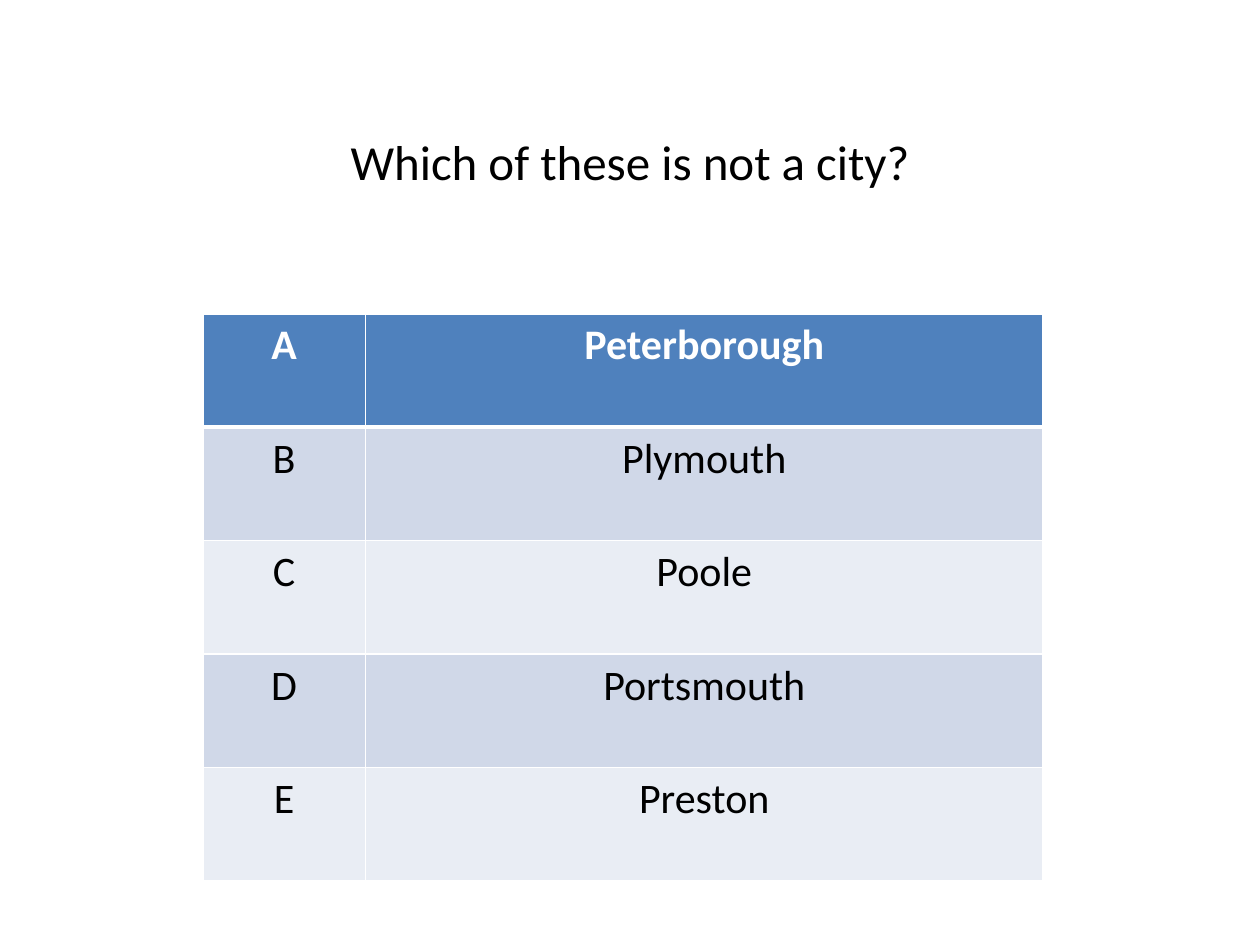
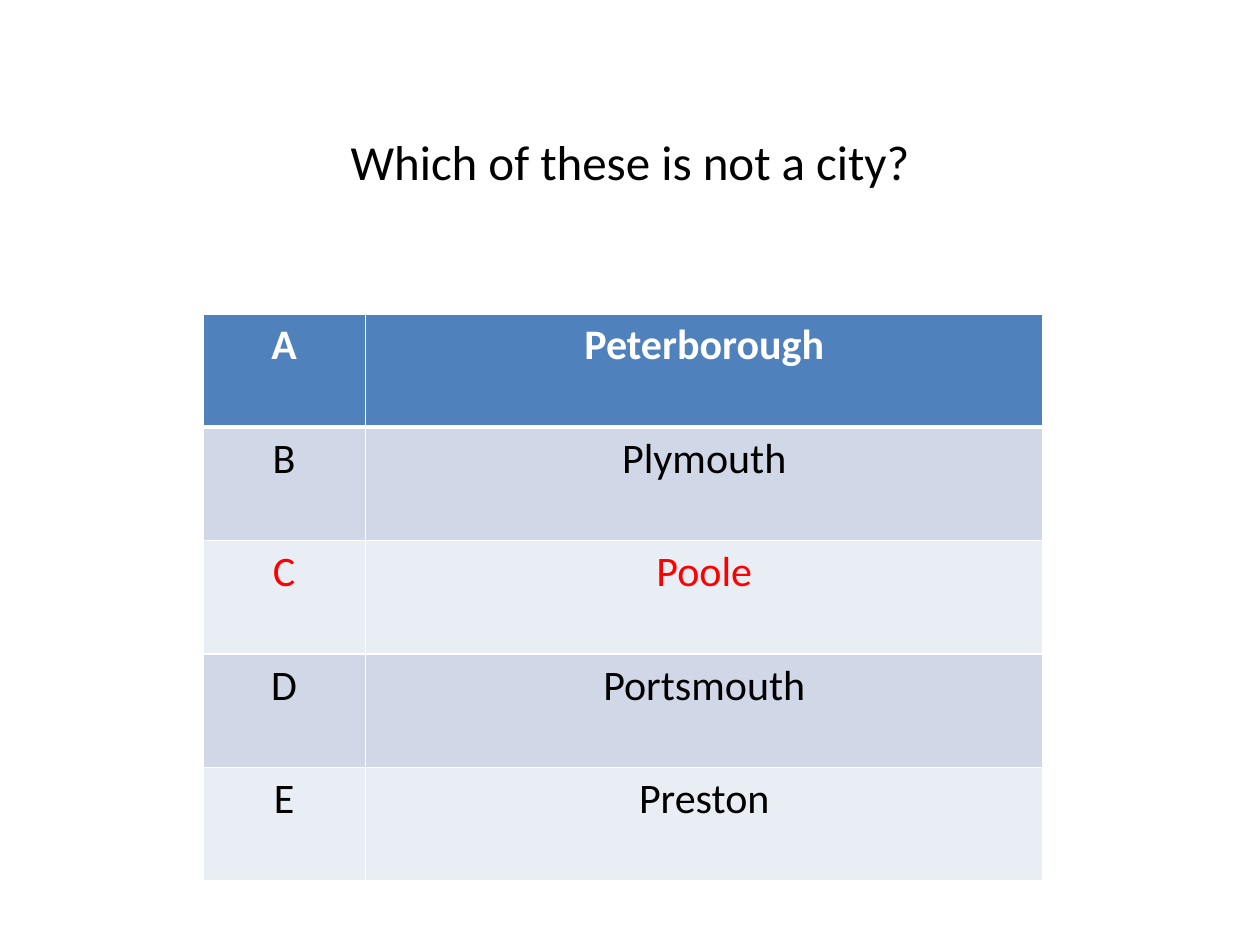
from lxml import etree
from pptx import Presentation
from pptx.dml.color import RGBColor
from pptx.enum.text import MSO_ANCHOR, PP_ALIGN
from pptx.oxml.ns import qn
from pptx.util import Inches, Pt

CENTER = PP_ALIGN.CENTER
MIDDLE = MSO_ANCHOR.MIDDLE
TITLE_ONLY = 5

COLORS = {
    "header": "4F81BD",
    "band_dark": "D0D8E8",
    "band_light": "E9EDF4",
    "white": "FFFFFF",
    "text": "000000",
    "answer": "FF0000",
}
FONT = "Calibri"
COLS, ROWS = 100, 75  # grid units across and down the slide

QUESTION = "Which of these is not a city?"
CITIES = ["Peterborough", "Plymouth", "Poole", "Portsmouth", "Preston"]
OPTIONS = list(zip("ABCDE", CITIES))


def rgb(name):
    return RGBColor.from_string(COLORS[name])


def write(tf, text, size=24, color="text", bold=False, align=CENTER):
    p = tf.paragraphs[0]
    p.alignment = align
    r = p.add_run()
    r.text = text
    r.font.name, r.font.size, r.font.bold = FONT, Pt(size), bold
    r.font.color.rgb = rgb(color)


def set_borders(cell, color="white", **widths):
    """Draw cell borders; L, R, T and B widths are in points."""
    tcPr = cell._tc.get_or_add_tcPr()
    for side in "LRTB":
        ln = etree.SubElement(tcPr, qn(f"a:ln{side}"),
                              w=str(Pt(widths.get(side, 1))))
        fill = etree.SubElement(ln, qn("a:solidFill"))
        etree.SubElement(fill, qn("a:srgbClr"), val=COLORS[color])


class Quiz:
    def __init__(self):
        self.prs = Presentation()
        self.prs.slide_width, self.prs.slide_height = Inches(10), Inches(7.5)
        self.s = None

    def x(self, cols):
        return round(self.prs.slide_width * cols / COLS)

    def y(self, rows):
        return round(self.prs.slide_height * rows / ROWS)

    def box(self, left, top, width, height):
        return self.x(left), self.y(top), self.x(width), self.y(height)

    def new_slide(self):
        self.s = self.prs.slides.add_slide(self.prs.slide_layouts[TITLE_ONLY])

    def title(self, text):
        sp = self.s.shapes.title
        sp.left, sp.top, sp.width, sp.height = self.box(19.3, 9.9, 61.4, 5.7)
        tf = sp.text_frame
        tf.word_wrap, tf.vertical_anchor = True, MIDDLE
        write(tf, text, size=28)

    def options(self, rows, answer=None):
        """Table of lettered options, with the answer's row in red if given."""
        widths, row_height = (12.9, 53.8), 9
        frame = self.s.shapes.add_table(
            len(rows), len(widths),
            *self.box(16.1, 24.9, sum(widths), row_height * len(rows)))
        table = frame.table
        table.horz_banding = False
        for column, width in zip(table.columns, widths):
            column.width = self.x(width)
        for i, row in enumerate(rows):
            table.rows[i].height = self.y(row_height)
            header = i == 0
            band = "band_dark" if i % 2 else "band_light"
            color = "answer" if row[0] == answer else "white" if header else "text"
            for cell, text in zip(table.rows[i].cells, row):
                set_borders(cell, T=3 if i == 1 else 1, B=3 if header else 1)
                cell.fill.solid()
                cell.fill.fore_color.rgb = rgb("header" if header else band)
                write(cell.text_frame, text, color=color, bold=header)


def main():
    quiz = Quiz()
    for answer in (None, "C"):
        quiz.new_slide()
        quiz.title(QUESTION)
        quiz.options(OPTIONS, answer)
    quiz.prs.save("out.pptx")


if __name__ == "__main__":
    main()
